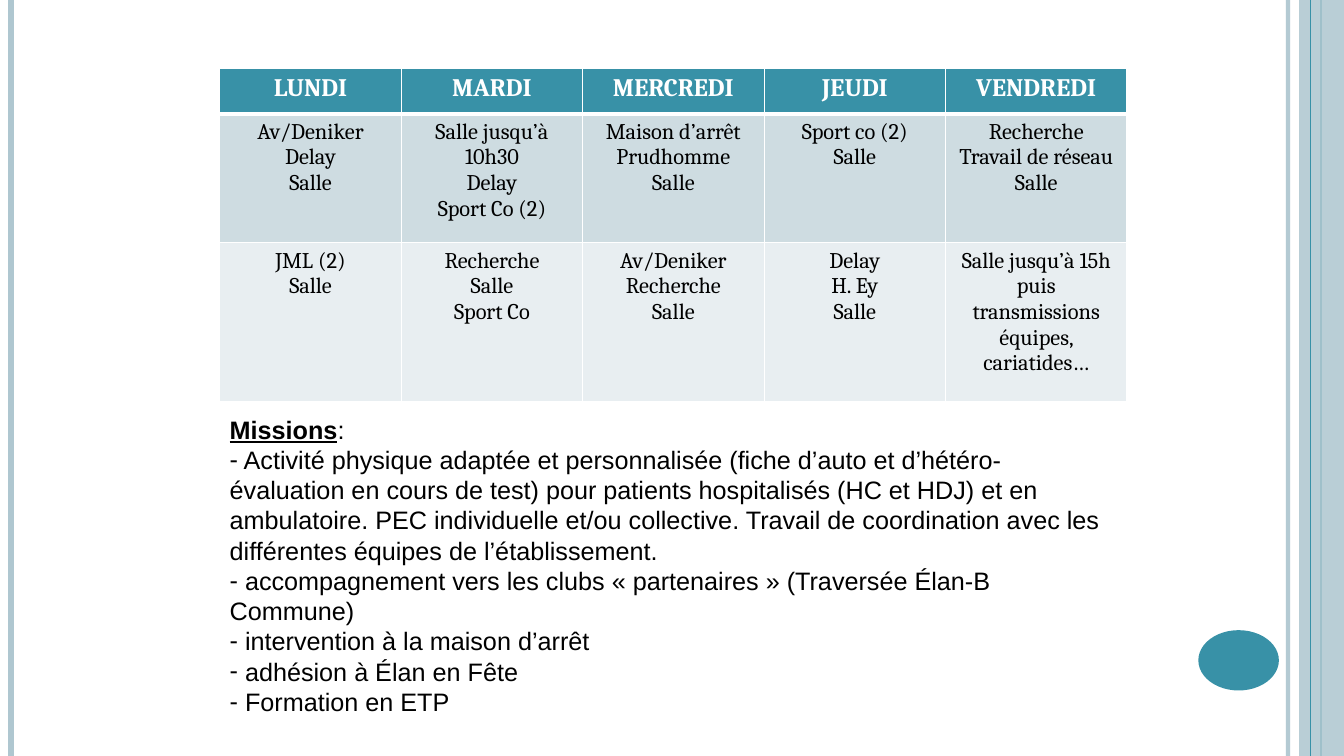
import dataclasses

import pptx
import pptx.dml.color
import pptx.enum.shapes
import pptx.enum.text
import pptx.oxml
import pptx.oxml.ns
import pptx.util

Cm = pptx.util.Cm
Pt = pptx.util.Pt


@dataclasses.dataclass(frozen=True)
class Theme:
    """Colours, fonts and type sizes of the slide."""
    teal: str = "3891A7"
    mist: str = "AFC7D0"
    white: str = "FFFFFF"
    black: str = "000000"
    bands: tuple = ("CEDCE1", "E8EEF1")
    serif: str = "Cambria"
    sans: str = "Arial"
    large: int = 18
    small: int = 16


THEME = Theme()

DAYS = ["LUNDI", "MARDI", "MERCREDI", "JEUDI", "VENDREDI"]
SHIFTS = [
    [["Av/Deniker", "Delay", "Salle"],
     ["Salle jusqu’à 10h30", "Delay", "Sport Co (2)"],
     ["Maison d’arrêt", "Prudhomme", "Salle"],
     ["Sport co (2)", "Salle"],
     ["Recherche", "Travail de réseau", "Salle"]],
    [["JML (2)", "Salle"],
     ["Recherche", "Salle", "Sport Co"],
     ["Av/Deniker", "Recherche", "Salle"],
     ["Delay", "H. Ey", "Salle"],
     ["Salle jusqu’à 15h puis transmissions équipes, cariatides…"]],
]
TASKS = [
    "Activité physique adaptée et personnalisée (fiche d’auto et d’hétéro-évaluation "
    "en cours de test) pour patients hospitalisés (HC et HDJ) et en ambulatoire. "
    "PEC individuelle et/ou collective. Travail de coordination avec les différentes "
    "équipes de l’établissement.",
    "accompagnement vers les clubs « partenaires » (Traversée Élan-B Commune)",
    "intervention à la maison d’arrêt",
    "adhésion à Élan en Fête",
    "Formation en ETP",
]


def rgb(code):
    """Return a colour object for a hex code."""
    return pptx.dml.color.RGBColor.from_string(code)


def node(tag, inner="", **attrs):
    """Return a drawing element with the given content."""
    space = pptx.oxml.ns.nsdecls("a")
    parts = "".join(f' {key}="{value}"' for key, value in attrs.items())
    return pptx.oxml.parse_xml(f"<a:{tag} {space}{parts}>{inner}</a:{tag}>")


def fade(fill, share):
    """Give a solid fill an opacity in percent."""
    colour = fill._xPr.find(pptx.oxml.ns.qn("a:solidFill"))[0]
    colour.append(node("alpha", val=share * 1000))


def write(para, text, font, size, colour, bold=False, under=False):
    """Add one styled run to a paragraph."""
    run = para.add_run()
    run.text = text
    run.font.name = font
    run.font.size = Pt(size)
    run.font.color.rgb = rgb(colour)
    run.font.bold = bold
    run.font.underline = under


def rule(slide, left, top, height, colour, width, share=100):
    """Draw a full-height upright line."""
    line = slide.shapes.add_connector(
        pptx.enum.shapes.MSO_CONNECTOR.STRAIGHT,
        Cm(left), Cm(top), Cm(left), Cm(top + height))
    line.line.color.rgb = rgb(colour)
    line.line.width = Pt(width)
    if share < 100:
        fade(line.line.fill, share)
    line._element.spPr.append(node("effectLst"))


def block(slide, kind, box, colour, share=100):
    """Draw a plain filled shape without outline."""
    shape = slide.shapes.add_shape(kind, *map(Cm, box))
    shape.shadow.inherit = False
    shape.fill.solid()
    shape.fill.fore_color.rgb = rgb(colour)
    shape.line.fill.background()
    if share < 100:
        fade(shape.fill, share)


def frame(slide, box):
    """Draw the side rules, right band and page disc."""
    left, top, width, height = box
    right = left + width
    kinds = pptx.enum.shapes.MSO_SHAPE
    rule(slide, right - 1.41, top, height, THEME.mist, 3, 93)
    rule(slide, left + 0.28, top, height, THEME.mist, 4.5)
    rule(slide, right - 0.57, top, height, THEME.teal, 1.5)
    block(slide, kinds.RECTANGLE, (right - 1.13, top, 1.13, height), THEME.mist, 87)
    rule(slide, right - 0.85, top, height, THEME.teal, 0.75)
    block(slide, kinds.OVAL, (right - 3.67, top + 15.88, 2.03, 1.52), THEME.teal)


def edge(cell, top, bottom):
    """Give a cell white borders, with widths for top and bottom."""
    inner = f'<a:solidFill><a:srgbClr val="{THEME.white}"/></a:solidFill>'
    props = cell._tc.get_or_add_tcPr()
    for side, width in (("L", 1), ("R", 1), ("T", top), ("B", bottom)):
        props.append(node("ln" + side, inner, w=Pt(width)))


def plan(slide, box):
    """Build the weekly table."""
    left, top, width, height = box
    rows = [[[day] for day in DAYS]] + SHIFTS
    table = slide.shapes.add_table(
        len(rows), len(DAYS), *map(Cm, box)).table
    for column in table.columns:
        column.width = Cm(width / len(DAYS))
    for row, size in zip(table.rows, (1.14, 3.25, height - 4.39)):
        row.height = Cm(size)
    for i, row in enumerate(rows):
        head = i == 0
        for j, lines in enumerate(row):
            cell = table.cell(i, j)
            edge(cell, 3 if i == 1 else 1, 3 if head else 1)
            cell.fill.solid()
            cell.fill.fore_color.rgb = rgb(THEME.teal if head else THEME.bands[i - 1])
            for k, text in enumerate(lines):
                para = cell.text_frame.add_paragraph() if k else cell.text_frame.paragraphs[0]
                para.alignment = pptx.enum.text.PP_ALIGN.CENTER
                write(para, text, THEME.serif, THEME.large if head else THEME.small,
                      THEME.white if head else THEME.black, head)


def goals(slide, box):
    """Write the heading and the dashed list of missions."""
    frame = slide.shapes.add_textbox(*map(Cm, box)).text_frame
    frame.word_wrap = True
    frame.auto_size = pptx.enum.text.MSO_AUTO_SIZE.SHAPE_TO_FIT_TEXT
    style = (THEME.sans, THEME.large, THEME.black)
    para = frame.paragraphs[0]
    write(para, "Missions", *style, bold=True, under=True)
    write(para, ":", *style)
    for task in TASKS:
        para = frame.add_paragraph()
        props = para._p.get_or_add_pPr()
        props.set("marL", "0")
        props.set("indent", "0")
        props.append(node("buFont", typeface=THEME.sans))
        props.append(node("buChar", char="-"))
        write(para, " " + task, *style)


def main():
    """Build and save the slide."""
    deck = pptx.Presentation()
    deck.slide_width = Cm(33.87)
    deck.slide_height = Cm(19.05)
    slide = deck.slides.add_slide(deck.slide_layouts[6])
    frame(slide, (0, 0, 33.87, 19.05))
    plan(slide, (5.54, 1.73, 22.86, 8.4))
    goals(slide, (5.54, 10.31, 22.81, 7.19))
    deck.save("out.pptx")


if __name__ == "__main__":
    main()
